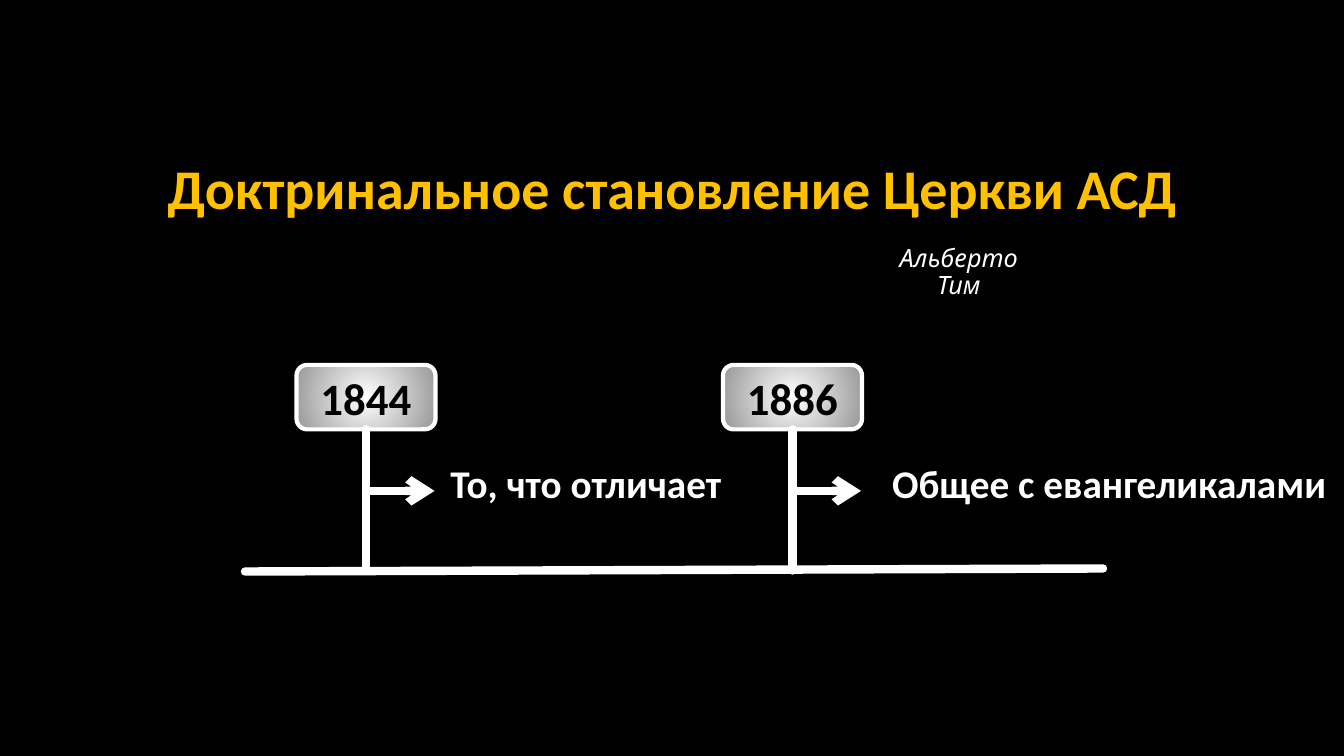
from pptx import Presentation
from pptx.dml.color import RGBColor
from pptx.enum.shapes import MSO_CONNECTOR as CONN, MSO_SHAPE as SHAPE
from pptx.enum.text import MSO_ANCHOR as ANCHOR, PP_ALIGN as ALIGN
from pptx.oxml import parse_xml
from pptx.oxml.ns import nsdecls, qn
from pptx.util import Inches, Pt

COLORS = {"black": "000000", "white": "FFFFFF", "gold": "FFC000", "grey": "979797"}
TITLE = ("Доктринальное становление Церкви АСД", (1.51, 1.47, 10.31, 0.77))
AUTHOR = ("Альберто Тим", (8.58, 2.39, 1.86, 0.4))
MILESTONES = [
    ("1844", 2.94, "То, что отличает", 4.32, 2.98),
    ("1886", 7.17, "Общее с евангеликалами", 8.67, 4.66),
]
TIMELINE = (2.43, 5.67, 10.94, 5.64)
YEAR_TOP, YEAR_W, YEAR_H = 3.62, 1.38, 0.64
STEM_END, ARROW_Y, ARROW_LEN = 5.66, 4.87, 0.68
LABEL_TOP, LABEL_H = 4.51, 0.57


def rgb(name):
    return RGBColor.from_string(COLORS[name])


def write(tf, text, size, color, font="Calibri", bold=True, italic=False):
    p = tf.paragraphs[0]
    p.text = text
    p.alignment = ALIGN.CENTER
    p.font.name, p.font.size = font, Pt(size)
    p.font.bold, p.font.italic = bold, italic
    p.font.color.rgb = rgb(color)
    return p


def add_text(text, box, size, color, wrap=True, **style):
    tf = slide.shapes.add_textbox(*map(Inches, box)).text_frame
    tf.word_wrap = wrap
    return tf, write(tf, text, size, color, **style)


def add_line(x1, y1, x2, y2, arrow=False):
    s = slide.shapes.add_connector(CONN.STRAIGHT, *map(Inches, (x1, y1, x2, y2)))
    s.line.color.rgb = rgb("white")
    s.line.width = Pt(6)
    ln = s.line._get_or_add_ln()
    ln.set("cap", "rnd")
    if arrow:
        ln.append(parse_xml(f'<a:tailEnd {nsdecls("a")} type="arrow"/>'))
    s._element.spPr.append(parse_xml(f'<a:effectLst {nsdecls("a")}/>'))
    return s


def add_year(year, left):
    s = slide.shapes.add_shape(
        SHAPE.ROUNDED_RECTANGLE, *map(Inches, (left, YEAR_TOP, YEAR_W, YEAR_H)))
    s.shadow.inherit = False
    s.fill.gradient()
    for stop, color in zip(s.fill.gradient_stops, ("white", "grey")):
        stop.color.rgb = rgb(color)
    grad = s._element.spPr.find(qn("a:gradFill"))
    grad.replace(grad.find(qn("a:lin")), parse_xml(
        f'<a:path {nsdecls("a")} path="circle">'
        '<a:fillToRect l="50000" t="50000" r="50000" b="50000"/></a:path>'))
    s.line.color.rgb = rgb("white")
    s.line.width = Pt(3)
    s.text_frame.vertical_anchor = ANCHOR.MIDDLE
    write(s.text_frame, year, 32, "black")
    return s


prs = Presentation()
prs.slide_width, prs.slide_height = Inches(13.33), Inches(7.5)
slide = prs.slides.add_slide(prs.slide_layouts[6])
slide.background.fill.solid()
slide.background.fill.fore_color.rgb = rgb("black")

add_text(*TITLE, 40, "gold", wrap=False)
tf, p = add_text(*AUTHOR, 18, "white", font="Noto Sans", bold=False, italic=True)
tf.margin_left = tf.margin_right = Inches(0.15)
p.line_spacing = 0.9

add_line(*TIMELINE)
for year, left, label, label_left, label_w in MILESTONES:
    box = add_year(year, left)
    center = left + YEAR_W / 2
    stem = add_line(center, YEAR_TOP + YEAR_H, center, STEM_END)
    stem.begin_connect(box, 2)
    add_line(center, ARROW_Y, center + ARROW_LEN, ARROW_Y, arrow=True)
    add_text(label, (label_left, LABEL_TOP, label_w, LABEL_H), 28, "white")

prs.save("out.pptx")
